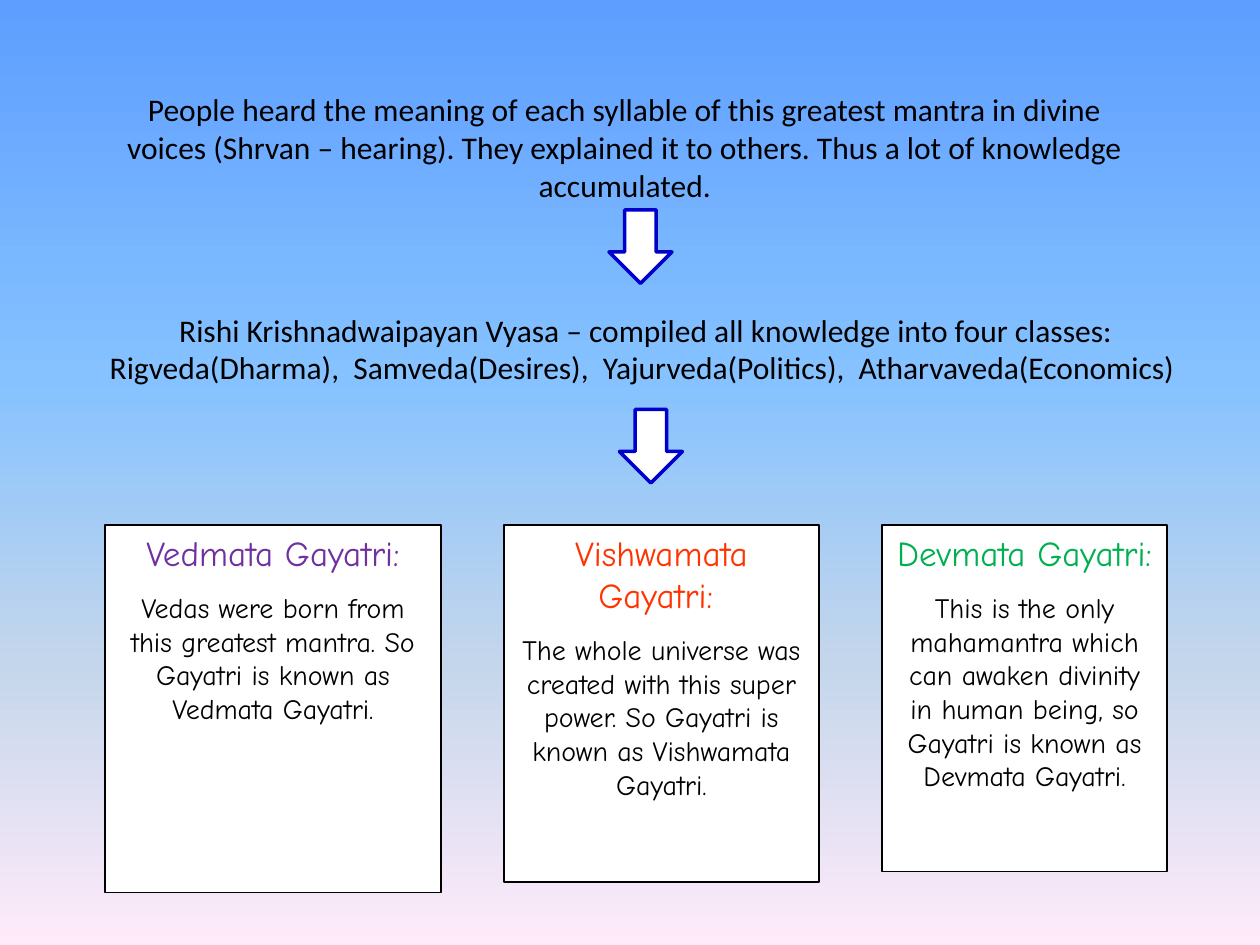
from lxml import etree
from pptx import Presentation
from pptx.dml.color import RGBColor
from pptx.enum.shapes import MSO_SHAPE
from pptx.enum.text import MSO_ANCHOR, PP_ALIGN
from pptx.oxml.ns import qn
from pptx.util import Pt

RECTANGLE = MSO_SHAPE.RECTANGLE
DOWN_ARROW = MSO_SHAPE.DOWN_ARROW
CENTER = PP_ALIGN.CENTER
TOP = MSO_ANCHOR.TOP

SKY = [(0, "5E9EFF"), (40, "85C2FF"), (70, "C4D6EB"), (100, "FFEBFA")]
STATEMENTS = [
    ("People heard the meaning of each syllable of this greatest mantra in divine "
     "voices (Shrvan – hearing). They explained it to others. Thus a lot of knowledge "
     "accumulated.", (60, 48, 594, 94)),
    ("Rishi Krishnadwaipayan Vyasa – compiled all knowledge into four classes: "
     "Rigveda(Dharma),  Samveda(Desires),  Yajurveda(Politics),  "
     "Atharvaveda(Economics) ", (36, 174, 666, 73)),
]
ARROWS = [(348, 120), (354, 234)]
ARROW_SIZE = (36, 42)
CARD_TOP = 300
CARDS = [
    (60, 192, 210, "7030A0", "Vedmata Gayatri:",
     "Vedas were born from this greatest mantra. So Gayatri is known as Vedmata Gayatri."),
    (288, 180, 204, "FF3300", "Vishwamata Gayatri: ",
     "The whole universe was created with this super power. So Gayatri is known as "
     "Vishwamata Gayatri."),
    (504, 163, 198, "00B050", "Devmata Gayatri: ",
     "This is the only mahamantra which can awaken divinity in human being, so "
     "Gayatri is known as Devmata Gayatri."),
]


def color(value):
    return RGBColor.from_string(value)


def paint_background(page, stops):
    fill = page.background.fill
    fill.gradient()
    fill.gradient_angle = 270
    stop_list = page.element.find(".//" + qn("a:gsLst"))
    stop_list.clear()
    for percent, value in stops:
        stop = etree.SubElement(stop_list, qn("a:gs"), pos=str(percent * 1000))
        etree.SubElement(stop, qn("a:srgbClr"), val=value)


def write(para, text, font="Calibri", size=18, ink="000000", after=0):
    para.alignment = CENTER
    para.space_after = Pt(after)
    span = para.add_run()
    span.text = text
    span.font.name = font
    span.font.size = Pt(size)
    span.font.color.rgb = color(ink)


def add_outlined(page, kind, place, line, weight):
    shape = page.shapes.add_shape(kind, *map(Pt, place))
    shape.shadow.inherit = False
    shape.fill.solid()
    shape.fill.fore_color.rgb = color("FFFFFF")
    shape.line.color.rgb = color(line)
    shape.line.width = Pt(weight)
    return shape


def main():
    deck = Presentation()
    deck.slide_width, deck.slide_height = Pt(720), Pt(540)
    page = deck.slides.add_slide(deck.slide_layouts[6])
    paint_background(page, SKY)

    for (text, place), corner in zip(STATEMENTS, ARROWS):
        box = page.shapes.add_textbox(*map(Pt, place))
        box.text_frame.word_wrap = True
        write(box.text_frame.paragraphs[0], text)
        add_outlined(page, DOWN_ARROW, corner + ARROW_SIZE, "0000CC", 2)

    for left, width, height, ink, title, body in CARDS:
        card = add_outlined(page, RECTANGLE, (left, CARD_TOP, width, height), "000000", 0.75)
        frame = card.text_frame
        frame.word_wrap = True
        frame.vertical_anchor = TOP
        write(frame.paragraphs[0], title, font="Comic Neue", size=20, ink=ink, after=10)
        write(frame.add_paragraph(), body, font="Comic Neue", size=16, after=10)

    deck.save("out.pptx")


if __name__ == "__main__":
    main()
